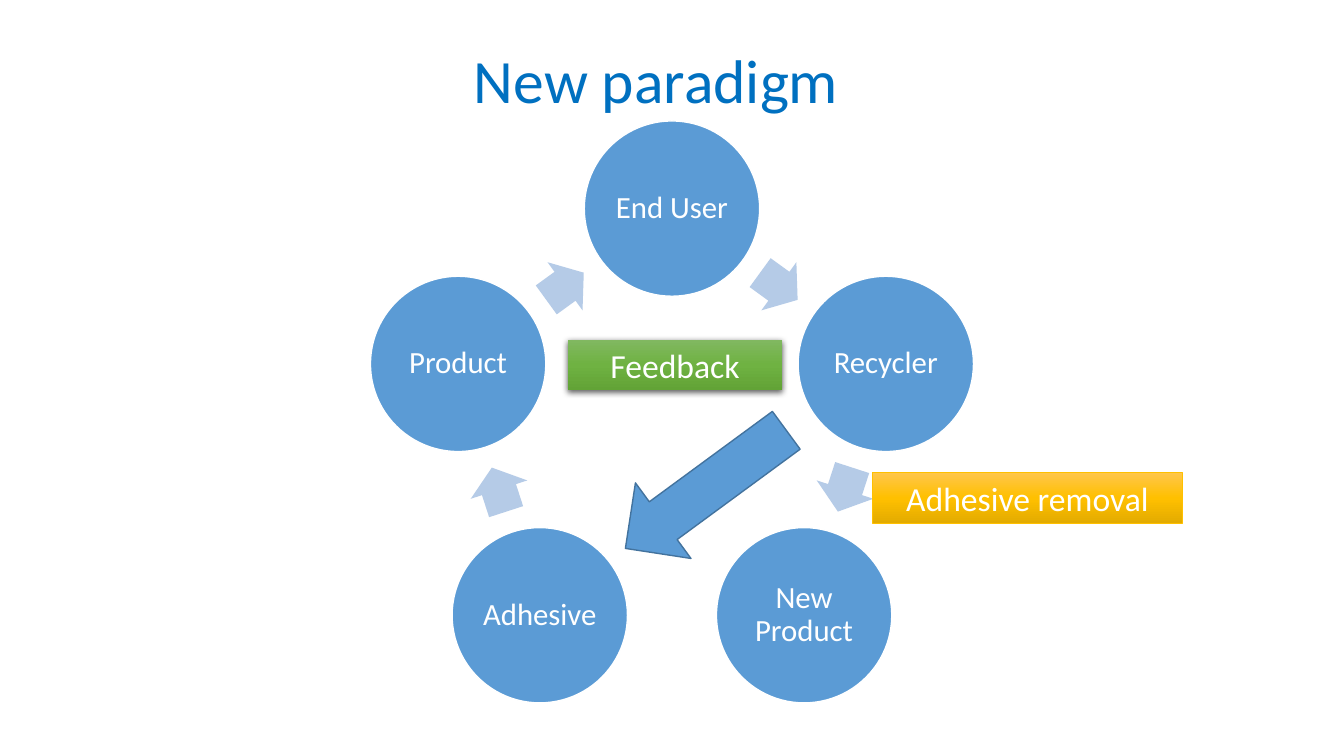
import copy
import math
import lxml.etree
import pptx
import pptx.dml.color
import pptx.enum.shapes
import pptx.enum.text
import pptx.oxml.ns
import pptx.util

THEME = {
    "font": "Calibri",
    "title": "0070C0", "text": "FFFFFF",
    "circle": "5B9BD5", "circle_line": "FFFFFF",
    "ring_arrow": "B5CBE7", "arrow_line": "43739E",
    "green": ("81B861", "6FB242", "62A336"),
    "amber": ("FFC64B", "FFC000", "E3AB00"), "amber_line": "FFC000",
    "title_size": 44, "circle_size": 22, "label_size": 24,
}
KIND = pptx.enum.shapes.MSO_SHAPE
RGB = pptx.dml.color.RGBColor.from_string
qn = pptx.oxml.ns.qn

prs = pptx.Presentation()
prs.slide_width = pptx.util.Inches(13.33)
prs.slide_height = pptx.util.Inches(7.5)
s = prs.slides.add_slide(prs.slide_layouts[5])

# Grid of 100 columns by 100 rows
COL = prs.slide_width / 100
ROW = prs.slide_height / 100


def add(kind, left, top, width, height, fill, line=None, weight=1):
    sp = s.shapes.add_shape(kind, int(left), int(top), int(width), int(height))
    sp.shadow.inherit = False
    if isinstance(fill, str):
        sp.fill.solid()
        sp.fill.fore_color.rgb = RGB(fill)
    else:
        sp.fill.gradient()
        sp.fill.gradient_angle = 270
        stops = sp._element.spPr.find(".//" + qn("a:gsLst"))
        stops.append(copy.deepcopy(stops[0]))
        for i, (stop, color) in enumerate(zip(sp.fill.gradient_stops, fill)):
            stop.position = i / 2
            stop.color.rgb = RGB(color)
    if line:
        sp.line.color.rgb = RGB(line)
        sp.line.width = pptx.util.Pt(weight)
    else:
        sp.line.fill.background()
    return sp


def write(sp, text, size, color, spacing=None):
    tf = sp.text_frame
    tf.word_wrap = True
    tf.vertical_anchor = pptx.enum.text.MSO_ANCHOR.MIDDLE
    p = tf.paragraphs[0]
    p.alignment = pptx.enum.text.PP_ALIGN.CENTER
    p.line_spacing = spacing
    r = p.add_run()
    r.text = text
    r.font.name = THEME["font"]
    r.font.size = pptx.util.Pt(size)
    r.font.color.rgb = RGB(color)
    return tf


# Title
title = s.shapes.title
title.left, title.top = int(5.7 * COL), int(1.33 * ROW)
title.width, title.height = int(86.27 * COL), int(19.33 * ROW)
write(title, "New paradigm", THEME["title_size"], THEME["title"], 0.9)

# Cycle: circles on a regular pentagon, clockwise from the top
stages = ["End User", "Recycler", "New Product", "Adhesive", "Product"]
step = 360 / len(stages)
radius, diameter = 16.73 * COL, 13.05 * COL
centers = []
for i in range(len(stages)):
    a = math.radians(i * step)
    centers.append((50 * COL + radius * math.sin(a),
                    57.33 * ROW - radius * math.cos(a)))

for stage, (x, y) in zip(stages, centers):
    sp = add(KIND.OVAL, x - diameter / 2, y - diameter / 2, diameter, diameter,
             THEME["circle"], THEME["circle_line"])
    tf = write(sp, stage, THEME["circle_size"], THEME["text"], 0.9)
    tf.margin_left = tf.margin_right = pptx.util.Inches(0.03)
    tf.margin_top = tf.margin_bottom = pptx.util.Inches(0.03)

# Ring arrows halfway between neighbours, none from New Product to Adhesive
arrow_w, arrow_h = 3.45 * COL, 7.87 * ROW
for i, (x1, y1) in enumerate(centers):
    if stages[i] == "New Product":
        continue
    x2, y2 = centers[(i + 1) % len(centers)]
    sp = add(KIND.RIGHT_ARROW, (x1 + x2 - arrow_w) / 2, (y1 + y2 - arrow_h) / 2,
             arrow_w, arrow_h, THEME["ring_arrow"])
    sp.adjustments[0] = 0.6
    sp.adjustments[1] = 0.5
    sp.rotation = (i + 0.5) * step

# Feedback arrow from Recycler to Adhesive
sp = add(KIND.RIGHT_ARROW, 45.09 * COL, 58.53 * ROW, 14.85 * COL, 12.4 * ROW,
         THEME["circle"], THEME["arrow_line"])
sp.rotation = 143.7

# Labels
feedback = add(KIND.RECTANGLE, 42.24 * COL, 44.93 * ROW, 15.98 * COL, 6.67 * ROW,
               THEME["green"])
removal = add(KIND.RECTANGLE, 64.89 * COL, 62.53 * ROW, 23.11 * COL, 6.67 * ROW,
              THEME["amber"], THEME["amber_line"], 0.5)
for sp, text in ((feedback, "Feedback"), (removal, "Adhesive removal")):
    tf = write(sp, text, THEME["label_size"], THEME["text"])
    tf.auto_size = pptx.enum.text.MSO_AUTO_SIZE.SHAPE_TO_FIT_TEXT

# Soft shadow under the feedback label
effects = feedback._element.spPr.find(qn("a:effectLst"))
shadow = lxml.etree.SubElement(
    effects, qn("a:outerShdw"), blurRad=str(pptx.util.Pt(4.5)),
    dist=str(pptx.util.Pt(1.5)), dir="5400000", algn="ctr", rotWithShape="0")
black = lxml.etree.SubElement(shadow, qn("a:srgbClr"), val="000000")
lxml.etree.SubElement(black, qn("a:alpha"), val="63000")

prs.save("out.pptx")
